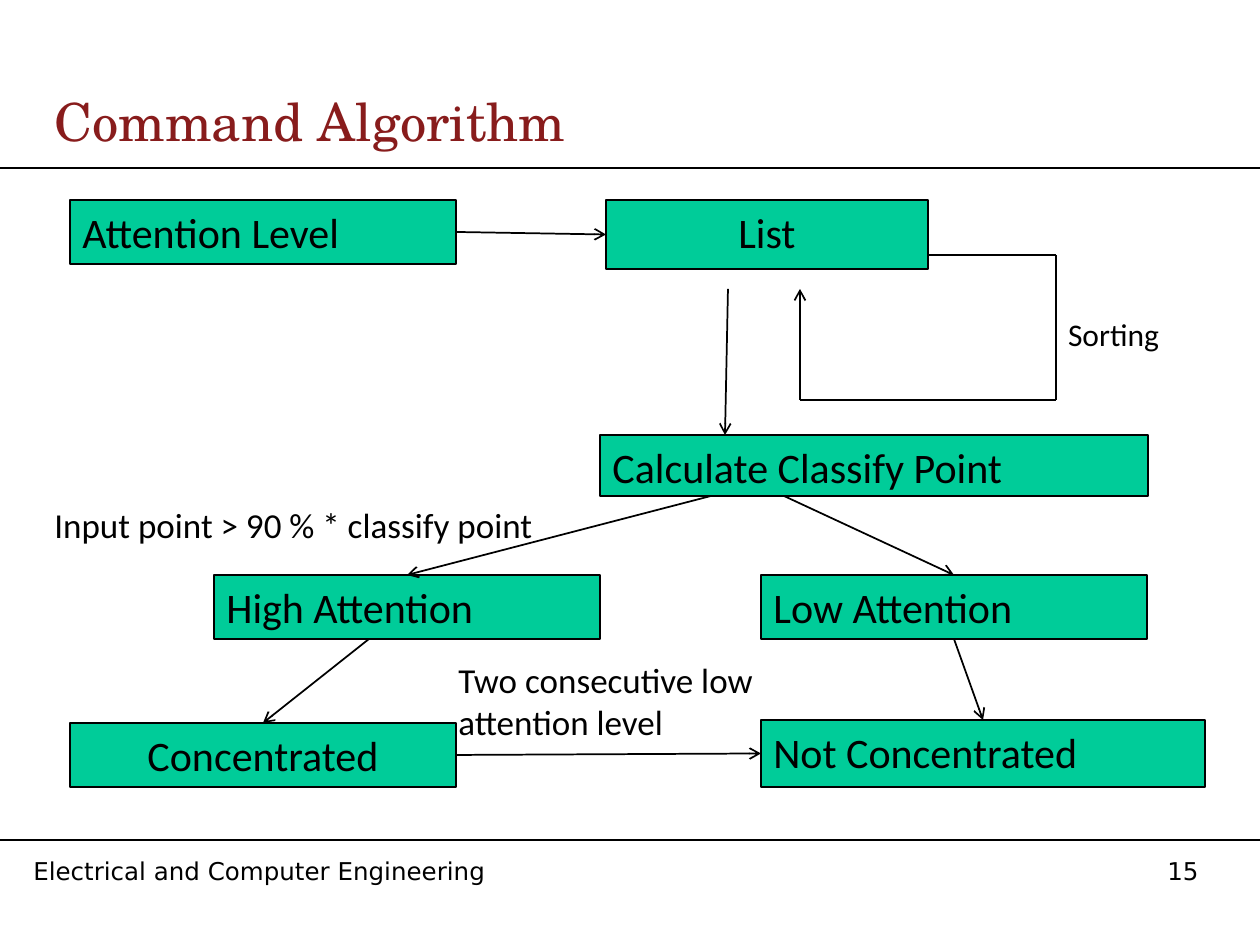
from itertools import pairwise

from lxml import etree
from pptx import Presentation
from pptx.dml.color import RGBColor
from pptx.enum.shapes import MSO_CONNECTOR as Connector, MSO_SHAPE as Shape
from pptx.enum.text import MSO_ANCHOR as Anchor, PP_ALIGN as Align
from pptx.oxml.ns import qn
from pptx.util import Pt

EMU_PER_PX = 914400 / 126
TOP, LEFT, BOTTOM, RIGHT = range(4)


def px(length):
    return round(length * EMU_PER_PX)


def color(hex_string):
    return RGBColor.from_string(hex_string)


class FlowSlide:
    """Holds the style and the current slide."""

    ink = "000000"
    box_fill = "00CC99"
    title_color = "881C1C"
    body_font = "Calibri"
    footer_font = "DejaVu Sans"
    title_font = "TeX Gyre Schola"

    def __init__(self, presentation):
        self.slide = presentation.slides.add_slide(presentation.slide_layouts[6])

    def set_text(self, shape, text, size, font, hex_string, align):
        frame = shape.text_frame
        frame.text = text
        frame.vertical_anchor = Anchor.TOP
        paragraph = frame.paragraphs[0]
        paragraph.alignment = align
        run_font = paragraph.runs[0].font
        run_font.size = Pt(size)
        run_font.name = font
        run_font.color.rgb = color(hex_string)

    def text(self, bounds, text, size, font=body_font, hex_string=ink,
             align=Align.LEFT, wrap=True):
        shape = self.slide.shapes.add_textbox(*map(px, bounds))
        self.set_text(shape, text, size, font, hex_string, align)
        shape.text_frame.word_wrap = wrap
        return shape

    def title(self, bounds, text):
        shape = self.text(bounds, text, 30, self.title_font, self.title_color)
        shape.text_frame.vertical_anchor = Anchor.MIDDLE

    def box(self, bounds, text, align=Align.LEFT):
        shape = self.slide.shapes.add_shape(Shape.RECTANGLE, *map(px, bounds))
        shape.shadow.inherit = False
        shape.fill.solid()
        shape.fill.fore_color.rgb = color(self.box_fill)
        shape.line.color.rgb = color(self.ink)
        shape.line.width = Pt(1)
        self.set_text(shape, text, 24, self.body_font, self.ink, align)
        return shape

    def line(self, start, end, arrow=False):
        """Draw a line; each end is an (x, y) point or a (box, side) pair."""
        points = [place if isinstance(place[0], int) else (0, 0)
                  for place in (start, end)]
        connector = self.slide.shapes.add_connector(
            Connector.STRAIGHT, *(px(value) for point in points for value in point))
        if not isinstance(start[0], int):
            connector.begin_connect(*start)
        if not isinstance(end[0], int):
            connector.end_connect(*end)
        connector.line.color.rgb = color(self.ink)
        connector.line.width = Pt(1)
        properties = connector._element.spPr
        if arrow:
            etree.SubElement(properties.find(qn("a:ln")), qn("a:tailEnd"), type="arrow")
        etree.SubElement(properties, qn("a:effectLst"))


def main():
    presentation = Presentation()
    presentation.slide_width = px(1260)
    presentation.slide_height = px(945)
    flow = FlowSlide(presentation)

    for y in (168, 840):
        flow.line((0, y), (1260, y))
    flow.title((42, 84, 1218, 73), "Command Algorithm")
    flow.text((21, 850, 479, 42), "Electrical and Computer Engineering", 14,
              flow.footer_font, wrap=False)
    flow.text((1155, 850, 84, 42), "15", 14, flow.footer_font)

    attention = flow.box((70, 200, 386, 64), "Attention Level")
    ranking = flow.box((606, 200, 322, 69), "List", Align.CENTER)
    flow.box((600, 435, 548, 61), "Calculate Classify Point")
    high = flow.box((214, 575, 386, 64), "High Attention")
    low = flow.box((761, 575, 386, 64), "Low Attention")
    concentrated = flow.box((70, 723, 386, 64), "Concentrated", Align.CENTER)
    distracted = flow.box((761, 720, 444, 67), "Not Concentrated")

    arrows = [
        ((attention, RIGHT), (ranking, LEFT)),
        ((728, 289), (725, 435)),
        ((711, 496), (high, TOP)),
        ((784, 496), (low, TOP)),
        ((369, 639), (concentrated, TOP)),
        ((low, BOTTOM), (distracted, TOP)),
        ((concentrated, RIGHT), (distracted, LEFT)),
    ]
    for start, end in arrows:
        flow.line(start, end, arrow=True)

    sorting_loop = [(928, 255), (1056, 255), (1056, 400), (800, 400), (800, 289)]
    for start, end in pairwise(sorting_loop):
        flow.line(start, end, arrow=end == sorting_loop[-1])

    flow.text((1022, 309, 183, 50), "Sorting", 18, align=Align.CENTER)
    flow.text((42, 497, 630, 55), "Input point > 90 % * classify point", 20)
    flow.text((446, 652, 338, 97), "Two consecutive low attention level", 20)

    presentation.save("out.pptx")


if __name__ == "__main__":
    main()
